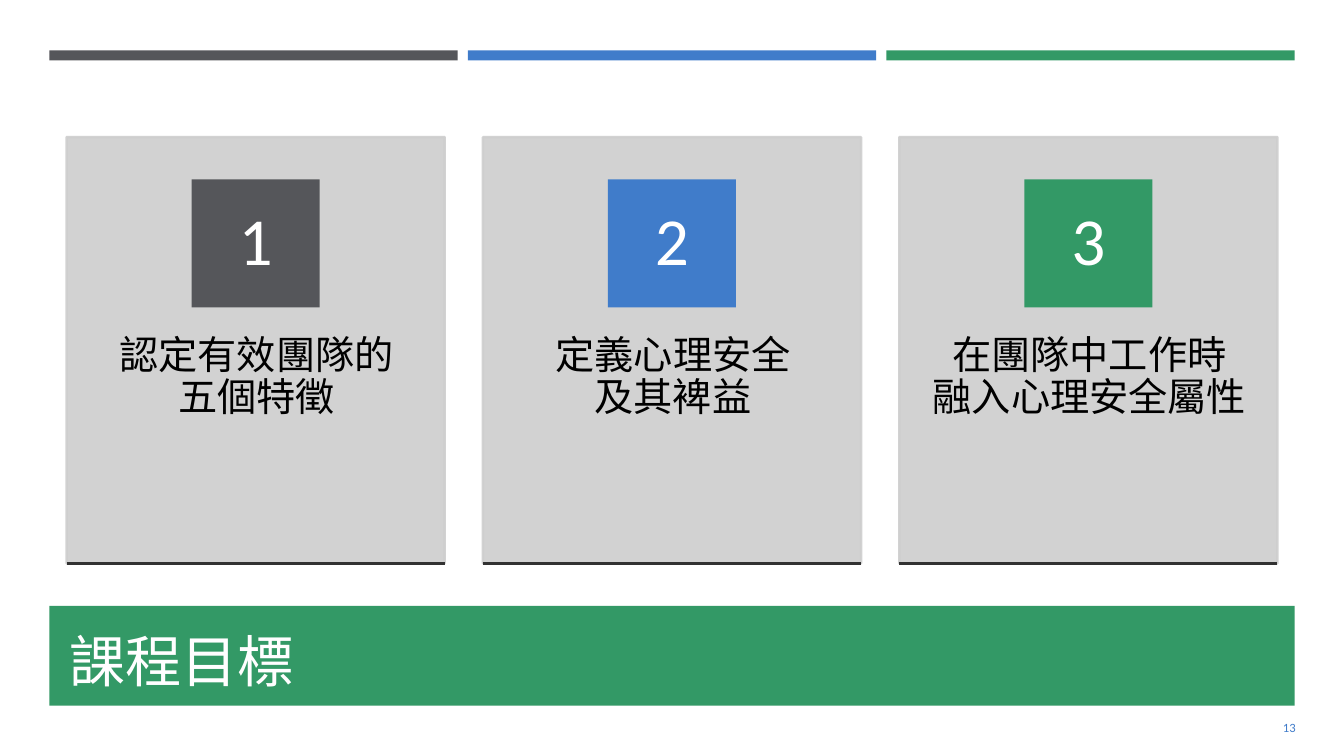
"""Build the course objectives slide with three numbered cards."""
from dataclasses import dataclass

from lxml import etree
from pptx import Presentation
from pptx import util as u
from pptx.dml.color import RGBColor
from pptx.enum import shapes, text
from pptx.oxml.ns import qn

GRAY = RGBColor(0x55, 0x56, 0x5A)
BLUE = RGBColor(0x40, 0x7C, 0xCA)
GREEN = RGBColor(0x33, 0x99, 0x66)
CARD_GRAY = RGBColor(0xCE, 0xCE, 0xCE)
RULE_DARK = RGBColor(0x32, 0x32, 0x32)
BLACK = RGBColor(0, 0, 0)
WHITE = RGBColor(0xFF, 0xFF, 0xFF)
TITLE_WHITE = RGBColor(0xFF, 0xFE, 0xFF)

BAR_LEFT, BAR_PITCH, BAR_WIDTH = 0.49, 4.15, 4.05
CARD_LEFT, CARD_PITCH, CARD_WIDTH = 0.66, 4.13, 3.75
CARD_TOP, CARD_HEIGHT = 1.36, 4.23
BADGE_SIZE = 1.27


@dataclass(frozen=True)
class Objective:
    number: str
    wording: str
    color: RGBColor


OBJECTIVES = (
    Objective("1", "認定有效團隊的\n五個特徵", GRAY),
    Objective("2", "定義心理安全\n及其裨益", BLUE),
    Objective("3", "在團隊中工作時\n融入心理安全屬性", GREEN),
)


def add_block(slide, left: float, top: float, width: float, height: float, color: RGBColor):
    block = slide.shapes.add_shape(
        shapes.MSO_SHAPE.RECTANGLE,
        u.Inches(left), u.Inches(top), u.Inches(width), u.Inches(height))
    block.shadow.inherit = False
    block.fill.solid()
    block.fill.fore_color.rgb = color
    block.line.fill.background()
    return block


def write(frame, wording: str, size: float, color: RGBColor, align,
          anchor=text.MSO_ANCHOR.MIDDLE, font_name: str = "Calibri",
          insets: tuple[float, float, float, float] = (0.1, 0.05, 0.1, 0.05)):
    frame.word_wrap = True
    frame.auto_size = text.MSO_AUTO_SIZE.NONE
    frame.vertical_anchor = anchor
    frame.margin_left, frame.margin_top, frame.margin_right, frame.margin_bottom = map(u.Inches, insets)
    paragraph = frame.paragraphs[0]
    paragraph.text = wording
    paragraph.alignment = align
    paragraph.font.name = font_name
    paragraph.font.size = u.Pt(size)
    paragraph.font.color.rgb = color
    return paragraph


def add_card(slide, left: float, objective: Objective) -> None:
    card = add_block(slide, left, CARD_TOP, CARD_WIDTH, CARD_HEIGHT, CARD_GRAY)
    card.line.color.rgb = CARD_GRAY
    card.line.width = u.Pt(1.75)
    for color in card.element.spPr.iter(qn("a:srgbClr")):
        etree.SubElement(color, qn("a:alpha"), val="90000")

    caption = slide.shapes.add_textbox(
        u.Inches(left), u.Inches(2.97), u.Inches(CARD_WIDTH), u.Inches(2.54))
    wording = write(caption.text_frame, objective.wording, 28, BLACK, text.PP_ALIGN.CENTER,
                    text.MSO_ANCHOR.TOP, insets=(0.31, 0.36, 0.29, 0.36))
    wording.line_spacing = 0.9

    badge = add_block(slide, left + (CARD_WIDTH - BADGE_SIZE) / 2, 1.78,
                      BADGE_SIZE, BADGE_SIZE, objective.color)
    number = write(badge.text_frame, objective.number, 48, WHITE, text.PP_ALIGN.CENTER,
                   insets=(0.1, 0.01, 0.1, 0.01))
    number.line_spacing = 0.9

    bottom = u.Inches(CARD_TOP + CARD_HEIGHT)
    rule = slide.shapes.add_connector(
        shapes.MSO_CONNECTOR.STRAIGHT,
        u.Inches(left), bottom, u.Inches(left + CARD_WIDTH), bottom)
    rule.line.color.rgb = RULE_DARK
    rule.line.width = u.Pt(1.75)
    etree.SubElement(rule.element.spPr, qn("a:effectLst"))


def main() -> None:
    deck = Presentation()
    deck.slide_width, deck.slide_height = u.Inches(13.33), u.Inches(7.5)
    slide = deck.slides.add_slide(deck.slide_layouts[5])

    for index, objective in enumerate(OBJECTIVES):
        add_block(slide, BAR_LEFT + index * BAR_PITCH, 0.5, BAR_WIDTH, 0.1, objective.color)

    title_band = add_block(slide, BAR_LEFT, 6.01, 12.35, 0.99, GREEN)
    title = slide.shapes.title
    title.left, title.top = u.Inches(0.59), u.Inches(6.11)
    title.width, title.height = u.Inches(12.06), u.Inches(0.87)
    write(title.text_frame, "課程目標", 40, TITLE_WHITE, text.PP_ALIGN.LEFT, font_name="Cambria")
    title_band.element.addnext(title.element)

    page = slide.shapes.add_textbox(u.Inches(11.8), u.Inches(7.02), u.Inches(1.15), u.Inches(0.4))
    write(page.text_frame, "13", 9, BLUE, text.PP_ALIGN.RIGHT).space_after = u.Pt(6)

    for index, objective in enumerate(OBJECTIVES):
        add_card(slide, CARD_LEFT + index * CARD_PITCH, objective)

    deck.save("out.pptx")


if __name__ == "__main__":
    main()
